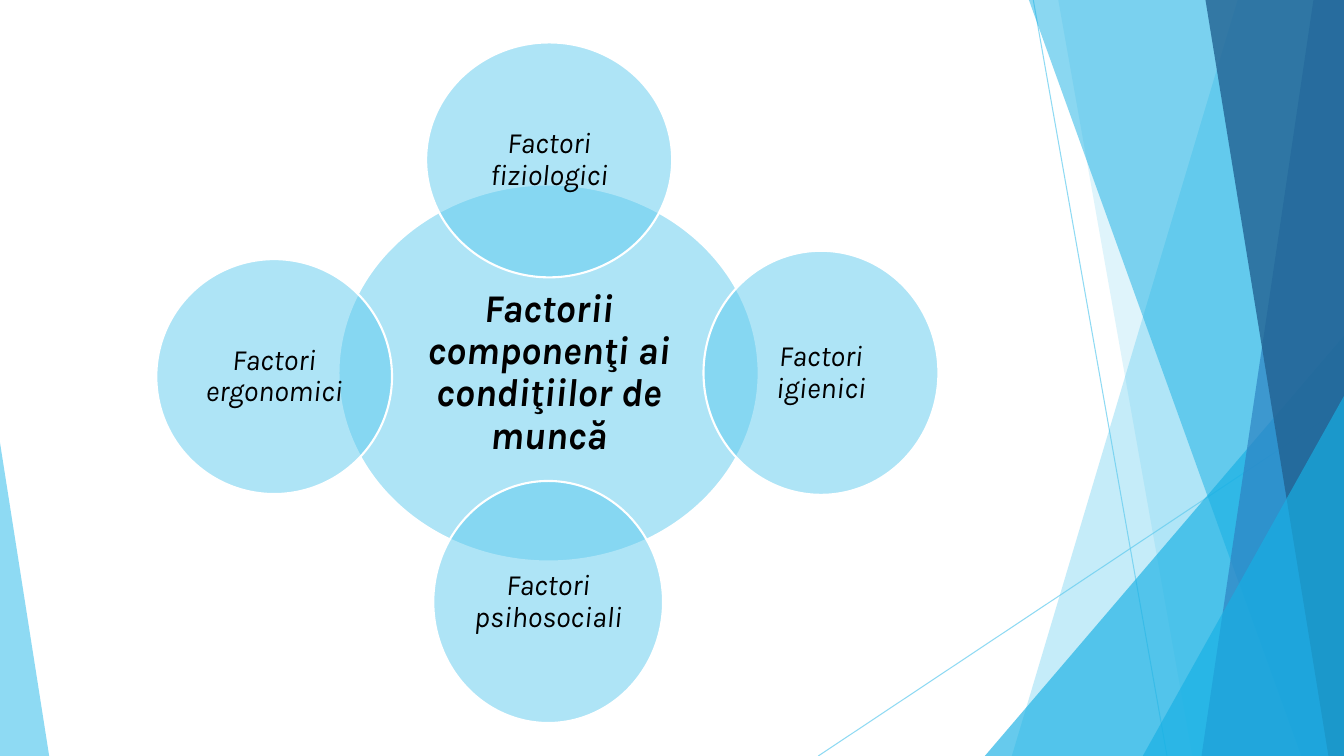
from lxml import etree
from pptx import Presentation
from pptx.dml.color import RGBColor
from pptx.enum.shapes import MSO_CONNECTOR, MSO_SHAPE
from pptx.enum.text import MSO_ANCHOR, PP_ALIGN
from pptx.oxml.ns import qn
from pptx.util import Cm, Pt

STRAIGHT = MSO_CONNECTOR.STRAIGHT
ELLIPSE, TRIANGLE = MSO_SHAPE.OVAL, MSO_SHAPE.ISOSCELES_TRIANGLE
MIDDLE, CENTER = MSO_ANCHOR.MIDDLE, PP_ALIGN.CENTER

FONT = "Karla"
COLORS = {
    "sky": "5FCBEF",
    "cyan": "17B0E4",
    "blue": "2E83C3",
    "navy": "226292",
    "white": "FFFFFF",
    "black": "000000",
}
# Box: left, top, width, height in centimetres
SLIDE_BOX = (0, 0, 33.87, 19.05)
DIAGRAM_BOX = (3.94, 1.07, 19.71, 17.15)

# Translucent facets from back to front: kind, geometry, color, opacity.
# A shard runs from its top x to its bottom x and fills to the right edge.
# A triangle has its left, top and width, and the side of its apex.
FACETS = [
    ("shard", (31.19, 25.5), "sky", 36),
    ("shard", (26.67, 30.05), "sky", 20),
    ("triangle", (24.82, 8.46, 9.05, 1), "cyan", 66),
    ("shard", (25.93, 32.79), "cyan", 50),
    ("shard", (33.1, 30.28), "blue", 70),
    ("shard", (30.38, 33.48), "navy", 80),
    ("triangle", (28.8, 9.98, 5.07, 1), "cyan", 66),
    ("triangle", (0, 11.15, 1.24, 0), "sky", 70),
]
RAYS = [(26.04, 0, 29.41, 19.05), (33.87, 10.24, 20.62, 19.05)]

# Circles: text, box inside the diagram, text size, bold
CIRCLES = [
    ("Factorii componenţi ai condiţiilor de muncă", (4.59, 3.58, 10.59, 9.5), 28, True),
    ("Factori fiziologici", (6.8, 0, 6.2, 5.92), 21, False),
    ("Factori igienici", (13.79, 5.25, 5.92, 6.15), 21, False),
    ("Factori psihosociali", (6.98, 11.05, 5.79, 6.1), 21, False),
    ("Factori ergonomici", (0, 5.46, 5.94, 5.92), 21, False),
]


def color_of(name):
    return RGBColor.from_string(COLORS[name])


def set_opacity(element, percent):
    color = next(element.iter(qn("a:srgbClr")))
    etree.SubElement(color, qn("a:alpha")).set("val", str(percent * 1000))


def paint(shape, color, opacity):
    shape.shadow.inherit = False
    shape.fill.solid()
    shape.fill.fore_color.rgb = color_of(color)
    set_opacity(shape.fill._xPr, opacity)
    shape.line.fill.background()


def add_ray(slide, box, ends):
    left, top = box[:2]
    x1, y1, x2, y2 = ends
    ray = slide.shapes.add_connector(
        STRAIGHT, Cm(left + x1), Cm(top + y1), Cm(left + x2), Cm(top + y2))
    ray.line.width = Pt(0.75)
    ray.line.color.rgb = color_of("sky")
    properties = ray._element.spPr
    set_opacity(properties, 70)
    etree.SubElement(properties, qn("a:effectLst"))


def add_shard(slide, box, top_x, bottom_x):
    left, top, width, height = box
    corners = [(width, 0), (width, height), (bottom_x, height)]
    builder = slide.shapes.build_freeform(Cm(left + top_x), Cm(top))
    builder.add_line_segments([(Cm(left + x), Cm(top + y)) for x, y in corners])
    return builder.convert_to_shape()


def add_triangle(slide, box, x, y, width, apex):
    left, top, _, height = box
    triangle = slide.shapes.add_shape(
        TRIANGLE, Cm(left + x), Cm(top + y), Cm(width), Cm(height - y))
    triangle.adjustments[0] = apex
    return triangle


def add_backdrop(slide, box):
    for ends in RAYS:
        add_ray(slide, box, ends)
    builders = {"shard": add_shard, "triangle": add_triangle}
    for kind, geometry, color, opacity in FACETS:
        paint(builders[kind](slide, box, *geometry), color, opacity)


def add_circle(slide, box, text, size, bold):
    circle = slide.shapes.add_shape(ELLIPSE, *map(Cm, box))
    paint(circle, "sky", 50)
    circle.line.color.rgb = color_of("white")
    circle.line.width = Pt(1.5)

    frame = circle.text_frame
    frame.word_wrap = True
    frame.vertical_anchor = MIDDLE
    frame.margin_left = frame.margin_right = Cm(0.08)
    frame.margin_top = frame.margin_bottom = Cm(0.08)
    frame.text = text
    paragraph = frame.paragraphs[0]
    paragraph.alignment = CENTER
    paragraph.line_spacing = 0.9
    font = paragraph.runs[0].font
    font.name, font.size = FONT, Pt(size)
    font.bold, font.italic = bold, True
    font.color.rgb = color_of("black")


def add_factor_diagram(slide, box):
    left, top = box[:2]
    for text, (x, y, width, height), size, bold in CIRCLES:
        add_circle(slide, (left + x, top + y, width, height), text, size, bold)


def main():
    presentation = Presentation()
    presentation.slide_width = Cm(SLIDE_BOX[2])
    presentation.slide_height = Cm(SLIDE_BOX[3])
    slide = presentation.slides.add_slide(presentation.slide_layouts[6])
    add_backdrop(slide, SLIDE_BOX)
    add_factor_diagram(slide, DIAGRAM_BOX)
    presentation.save("out.pptx")


if __name__ == "__main__":
    main()
